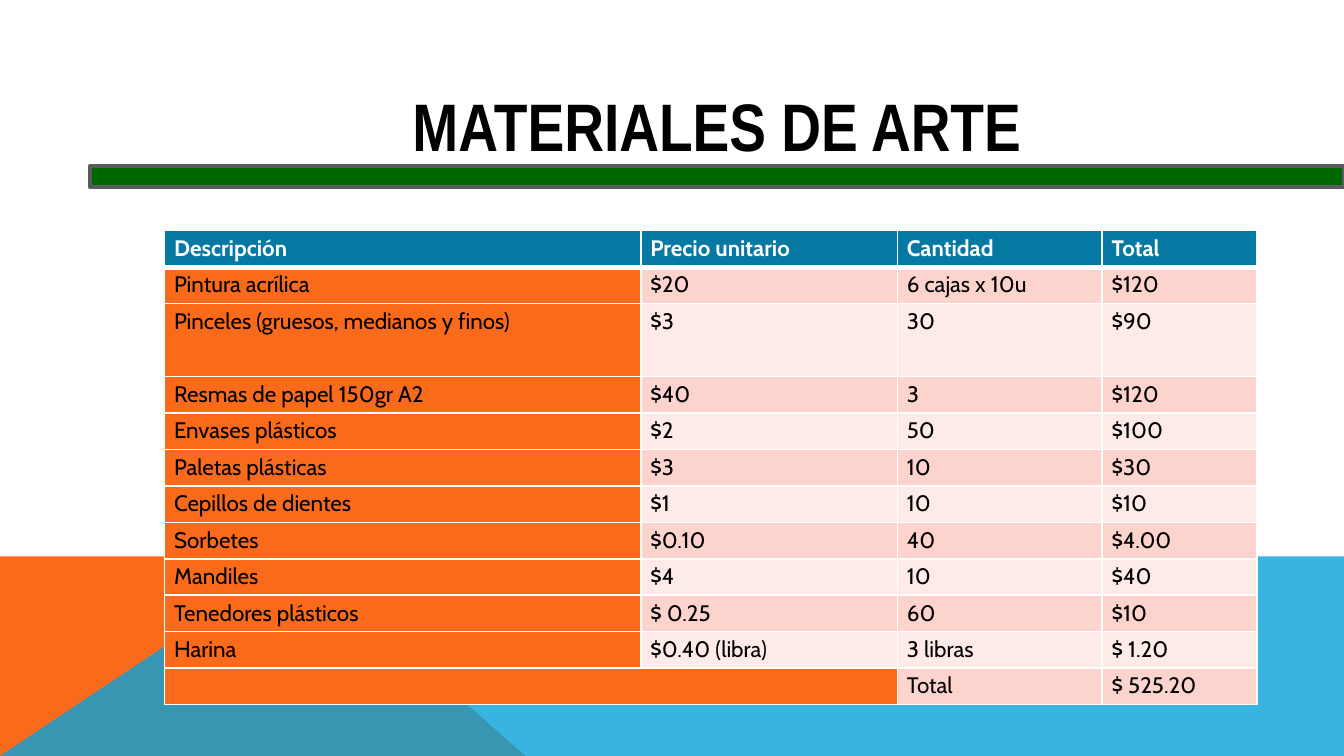
import dataclasses

import lxml.etree
import pptx
import pptx.dml.color
import pptx.enum.shapes
import pptx.enum.text
import pptx.oxml.ns
import pptx.util

Cm = pptx.util.Cm
Pt = pptx.util.Pt
qn = pptx.oxml.ns.qn
ALIGN = pptx.enum.text.PP_ALIGN


@dataclasses.dataclass
class Theme:
    title_font: str = "Arial Narrow"
    body_font: str = "Cabin"
    title_size: int = 36
    body_size: int = 12
    text: str = "000000"
    white: str = "FFFFFF"
    orange: str = "F96A1B"
    blue: str = "08A1D9"
    green: str = "006600"
    grey: str = "5A5B5D"
    header: str = "0679A3"
    bands: tuple = ("FDD4CD", "FEEBE8")


def rgb(value):
    return pptx.dml.color.RGBColor.from_string(value)


def apply(target, values):
    for name, value in values.items():
        setattr(target, name, value)


class Deck:
    def __init__(self, prs, theme):
        self.theme = theme
        self.s = prs.slides.add_slide(prs.slide_layouts[5])

    def paint(self, sp, fill, line=None, width=2):
        sp.shadow.inherit = False
        sp.fill.solid()
        sp.fill.fore_color.rgb = rgb(fill)
        if line:
            sp.line.color.rgb = rgb(line)
            sp.line.width = Pt(width)
        else:
            sp.line.fill.background()

    def polygon(self, points, fill, alpha=None):
        start, *rest = [(Cm(x), Cm(y)) for x, y in points]
        builder = self.s.shapes.build_freeform(*start)
        builder.add_line_segments(rest, close=True)
        sp = builder.convert_to_shape()
        self.paint(sp, fill)
        if alpha:
            color = sp.fill._xPr.find(".//" + qn("a:srgbClr"))
            lxml.etree.SubElement(color, qn("a:alpha")).set("val", str(alpha * 1000))

    def title(self, text, box):
        sp = self.s.shapes.title
        apply(sp, dict(zip(("left", "top", "width", "height"), map(Cm, box))))
        tf = sp.text_frame
        apply(tf, {
            "text": text,
            "word_wrap": True,
            "auto_size": pptx.enum.text.MSO_AUTO_SIZE.NONE,
            "vertical_anchor": pptx.enum.text.MSO_ANCHOR.BOTTOM,
        })
        p = tf.paragraphs[0]
        p.alignment = ALIGN.CENTER
        font = p.runs[0].font
        apply(font, {"name": self.theme.title_font,
                     "size": Pt(self.theme.title_size), "bold": True})
        font.color.rgb = rgb(self.theme.text)

    def bar(self, box, fill, line):
        sp = self.s.shapes.add_shape(
            pptx.enum.shapes.MSO_SHAPE.RECTANGLE, *map(Cm, box))
        self.paint(sp, fill, line)

    def borders(self, cell, bottom):
        tc_pr = cell._tc.get_or_add_tcPr()
        for i, (side, width) in enumerate(
                {"lnL": 1, "lnR": 1, "lnT": 1, "lnB": bottom}.items()):
            ln = lxml.etree.Element(qn("a:" + side), w=str(Pt(width)))
            fill = lxml.etree.SubElement(ln, qn("a:solidFill"))
            lxml.etree.SubElement(fill, qn("a:srgbClr"), val=self.theme.white)
            tc_pr.insert(i, ln)

    def cell(self, cell, text, fill, color, bold, align, bottom):
        apply(cell, {"margin_left": Cm(0.18), "margin_right": Cm(0.18),
                     "margin_top": 0, "margin_bottom": 0})
        cell.fill.solid()
        cell.fill.fore_color.rgb = rgb(fill)
        self.borders(cell, bottom)
        p = cell.text_frame.paragraphs[0]
        apply(p, {"alignment": align, "line_spacing": 1.15})
        if not text:
            p._p.get_or_add_endParaRPr().set("sz", str(self.theme.body_size * 100))
            return
        r = p.add_run()
        r.text = text
        apply(r.font, {"name": self.theme.body_font,
                       "size": Pt(self.theme.body_size), "bold": bold})
        r.font.color.rgb = rgb(color)

    def table(self, rows, left, top, widths, heights):
        t = self.theme
        table = self.s.shapes.add_table(
            len(rows), len(widths), Cm(left), Cm(top),
            Cm(sum(widths)), Cm(sum(heights))).table
        apply(table, {"first_row": False, "horz_banding": False})
        for column, width in zip(table.columns, widths):
            column.width = Cm(width)
        for row, height in zip(table.rows, heights):
            row.height = Cm(height)
        last = len(rows) - 1
        for i, values in enumerate(rows):
            head = i == 0
            for j, text in enumerate(values):
                band = t.orange if j == 0 else t.bands[(i - 1) % 2]
                self.cell(
                    table.cell(i, j), text,
                    fill=t.header if head else band,
                    color=t.white if head else t.text,
                    bold=head,
                    align=ALIGN.LEFT if i == last else ALIGN.JUSTIFY,
                    bottom=3 if head else 1)
        table.cell(last, 0).merge(table.cell(last, 1))


MATERIALS = [
    ("Descripción", "Precio unitario", "Cantidad", "Total"),
    ("Pintura acrílica", "$20", "6 cajas x 10u", "$120"),
    ("Pinceles (gruesos, medianos y finos)", "$3", "30", "$90"),
    ("Resmas de papel 150gr A2", "$40", "3", "$120"),
    ("Envases plásticos", "$2", "50", "$100"),
    ("Paletas plásticas", "$3", "10", "$30"),
    ("Cepillos de dientes", "$1", "10", "$10"),
    ("Sorbetes", "$0.10", "40", "$4.00"),
    ("Mandiles", "$4", "10", "$40"),
    ("Tenedores plásticos", "$ 0.25", "60", "$10"),
    ("Harina", "$0.40 (libra)", "3 libras", "$ 1.20"),
    ("", "", "Total", "$ 525.20"),
]


def main():
    width, height, horizon, peak = 25.4, 14.29, 10.52, 5.66
    prs = pptx.Presentation()
    apply(prs, {"slide_width": Cm(width), "slide_height": Cm(height)})
    theme = Theme()
    deck = Deck(prs, theme)
    deck.polygon([(0, height), (0, horizon), (peak, horizon), (9.93, height)],
                 theme.orange)
    deck.polygon([(0, height), (peak, horizon), (width, horizon), (width, height)],
                 theme.blue, alpha=80)
    deck.title("MATERIALES DE ARTE", (4.55, 0.46, 18, 2.79))
    deck.bar((1.7, 3.14, 23.7, 0.4), theme.green, theme.grey)
    row = 0.69
    heights = [2 * row if i == 2 else row for i in range(len(MATERIALS))]
    deck.table(MATERIALS, 3.11, 4.36, (9, 4.85, 3.87, 2.93), heights)
    prs.save("out.pptx")


if __name__ == "__main__":
    main()
